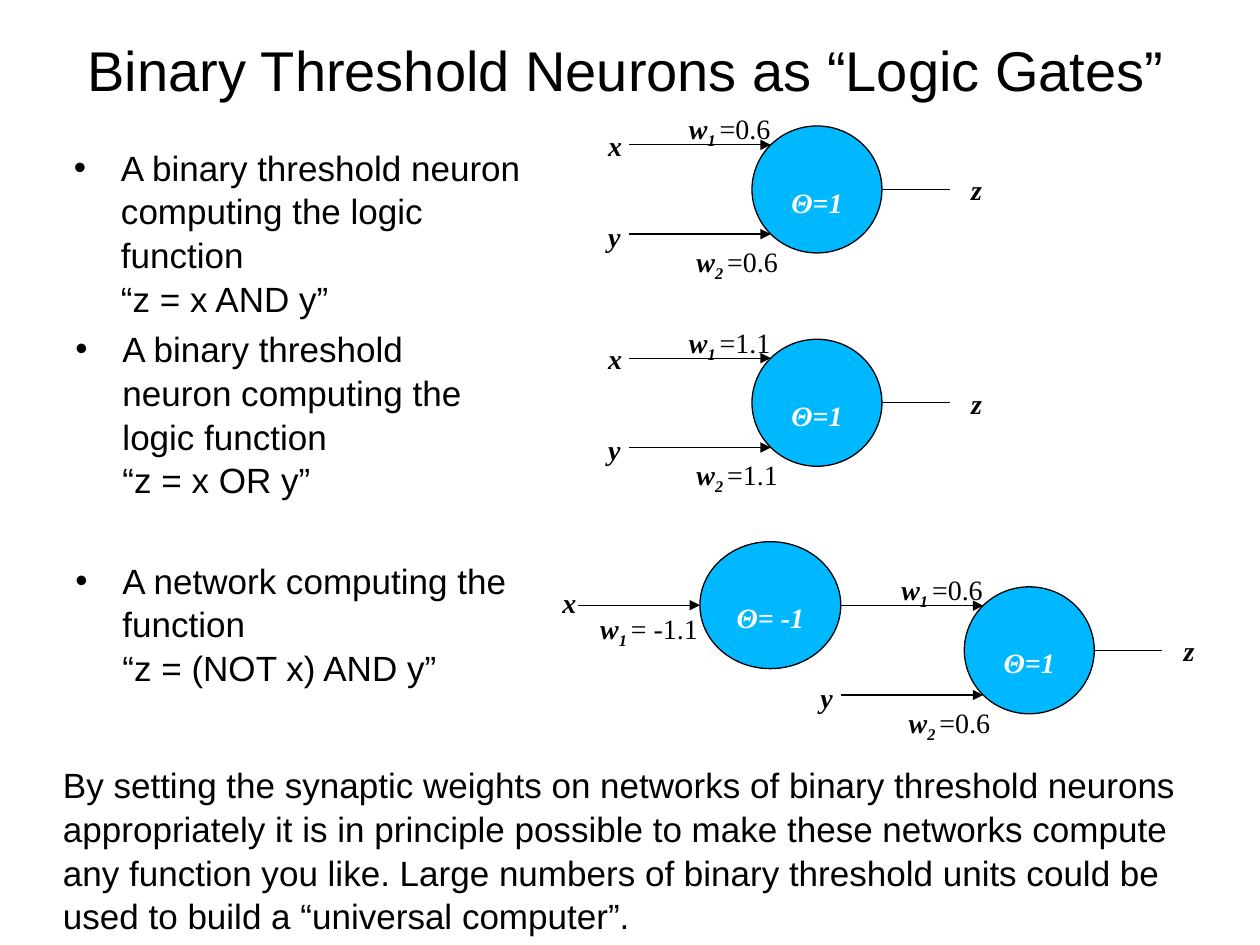
from dataclasses import dataclass

from lxml import etree
from pptx import Presentation
from pptx import util as u
from pptx.dml.color import RGBColor
from pptx.enum import shapes, text
from pptx.oxml import ns


@dataclass(frozen=True)
class Theme:
    ink: RGBColor = RGBColor(0x00, 0x00, 0x00)
    paper: RGBColor = RGBColor(0xFF, 0xFF, 0xFF)
    neuron: RGBColor = RGBColor(0x00, 0xB8, 0xFF)
    sans: str = "Arial"
    serif: str = "Times New Roman"
    title: int = 32
    body: int = 20
    label: int = 16
    line: float = 0.75
    leading: float = 1.04


T = Theme()
LABEL_H = 0.94
NEURON_H = 2.56
INSET = 0.13


# Basic parts; all positions are in centimetres
def add_run(p, words, size, font, color=T.ink, strong=False):
    r = p.add_run()
    r.text = words
    r.font.size = u.Pt(size)
    r.font.name = font
    r.font.color.rgb = color
    r.font.bold = r.font.italic = strong
    return r


def add_box(s, x, y, w, h, wrap=True):
    tf = s.shapes.add_textbox(u.Cm(x), u.Cm(y), u.Cm(w), u.Cm(h)).text_frame
    tf.word_wrap = wrap
    return tf


def add_bullet(p, indent=0.95):
    pPr = p._p.get_or_add_pPr()
    pPr.set("marL", str(u.Cm(indent)))
    pPr.set("indent", str(u.Cm(-indent)))
    etree.SubElement(pPr, ns.qn("a:buFont")).set("typeface", T.sans)
    etree.SubElement(pPr, ns.qn("a:buChar")).set("char", "•")


def add_line(s, x1, y1, x2, y2, arrow=False):
    line = s.shapes.add_connector(shapes.MSO_CONNECTOR.STRAIGHT,
                                  u.Cm(x1), u.Cm(y1), u.Cm(x2), u.Cm(y2))
    line.line.color.rgb = T.ink
    line.line.width = u.Pt(T.line)
    if arrow:
        etree.SubElement(line.line._get_or_add_ln(), ns.qn("a:tailEnd")).set("type", "triangle")
    etree.SubElement(line._element.spPr, ns.qn("a:effectLst"))


def add_variable(s, name, x, y):
    p = add_box(s, x, y, 0.92, LABEL_H, wrap=False).paragraphs[0]
    add_run(p, name, T.label, T.serif, strong=True)


def add_weight(s, index, value, x, y, w=2.26):
    p = add_box(s, x, y, w, LABEL_H, wrap=False).paragraphs[0]
    add_run(p, "w", T.label, T.serif, strong=True)
    sub = add_run(p, f"{index} ", T.label, T.serif, strong=True)
    sub._r.get_or_add_rPr().set("baseline", "-25000")
    add_run(p, value, T.label, T.serif)


def add_neuron(s, threshold, x, y, w):
    sp = s.shapes.add_shape(shapes.MSO_SHAPE.OVAL, u.Cm(x), u.Cm(y), u.Cm(w), u.Cm(NEURON_H))
    sp.shadow.inherit = False
    sp.fill.solid()
    sp.fill.fore_color.rgb = T.neuron
    sp.line.color.rgb = T.ink
    sp.line.width = u.Pt(T.line)
    tf = sp.text_frame
    tf.word_wrap = False
    tf.vertical_anchor = text.MSO_ANCHOR.MIDDLE
    tf.margin_top = u.Cm(INSET + 0.5)  # sets the threshold below centre
    tf.margin_bottom = u.Cm(INSET)
    p = tf.paragraphs[0]
    p.alignment = text.PP_ALIGN.CENTER
    add_run(p, threshold, T.label, T.serif, T.paper, strong=True)


# Regions of the slide
def place_title(s, words, x, y, w, h):
    sp = s.shapes.title
    sp.left, sp.top, sp.width, sp.height = (u.Cm(v) for v in (x, y, w, h))
    tf = sp.text_frame
    tf.auto_size = text.MSO_AUTO_SIZE.NONE
    tf.vertical_anchor = text.MSO_ANCHOR.MIDDLE
    p = tf.paragraphs[0]
    p.alignment = text.PP_ALIGN.CENTER
    add_run(p, words, T.title, T.sans)


def place_bullets(s, items, x, y, w, h, gap=32.5):
    tf = add_box(s, x, y, w, h)
    for i, (words, formula) in enumerate(items):
        p = tf.add_paragraph() if i else tf.paragraphs[0]
        add_bullet(p)
        p.line_spacing = T.leading
        if i:
            p.space_before = u.Pt(gap)
        add_run(p, words, T.body, T.sans)
        p.add_line_break()
        add_run(p, formula, T.body, T.sans)


def place_gate(s, weight, x, y, show_x=True):
    """Two-input neuron whose circle has its top left corner at x, y."""
    w, edge = 2.62, 0.38
    add_neuron(s, "Θ=1", x, y, w)
    add_line(s, x + w, y + NEURON_H / 2, x + w + 1.37, y + NEURON_H / 2)
    for input_y in (y + edge, y + NEURON_H - edge):
        add_line(s, x - 2.48, input_y, x + edge, input_y, arrow=True)
    add_weight(s, 1, weight, x - 1.52, y - 0.41)
    add_weight(s, 2, weight, x - 1.37, y + 2.26)
    if show_x:
        add_variable(s, "x", x - 3.15, y - 0.08)
    add_variable(s, "y", x - 3.15, y + 1.76)
    add_variable(s, "z", x + 4.17, y + 0.82)


def place_inverter(s, x, y):
    """One-input neuron whose circle has its top left corner at x, y."""
    add_neuron(s, "Θ= -1", x, y, 2.84)
    add_line(s, x - 2.46, y + NEURON_H / 2, x, y + NEURON_H / 2, arrow=True)
    add_weight(s, 1, "= -1.1", x - 2.26, y + 1.28, 2.59)
    add_variable(s, "x", x - 3.02, y + 0.76)


def place_summary(s, words, x, y, w, h):
    p = add_box(s, x, y, w, h).paragraphs[0]
    p.line_spacing = T.leading
    add_run(p, words, T.body, T.sans)


def main():
    prs = Presentation()
    prs.slide_width, prs.slide_height = u.Cm(25.4), u.Cm(19.05)
    s = prs.slides.add_slide(prs.slide_layouts[5])
    gate_text = "A binary threshold neuron computing the logic function"

    place_title(s, "Binary Threshold Neurons as “Logic Gates”", 0.56, -0.05, 24.13, 2.9)
    place_bullets(s, [(gate_text, "“z = x AND y”")], 1.24, 2.79, 10.03, 6.6)
    place_bullets(s, [(gate_text, "“z = x OR y”"),
                      ("A network computing the function", "“z = (NOT x) AND y”")],
                  1.27, 6.45, 9.4, 6.6)

    # AND gate, OR gate, and the network of two neurons
    place_gate(s, "=0.6", 15.16, 2.54)
    place_gate(s, "=1.1", 15.16, 6.84)
    place_gate(s, "=0.6", 19.44, 11.83, show_x=False)
    place_inverter(s, 14.11, 10.92)

    place_summary(s, "By setting the synaptic weights on networks of binary threshold neurons "
                     "appropriately it is in principle possible to make these networks compute "
                     "any function you like. Large numbers of binary threshold units could be "
                     "used to build a “universal computer”.", 1.02, 15.24, 23.24, 3.07)
    prs.save("out.pptx")


if __name__ == "__main__":
    main()
